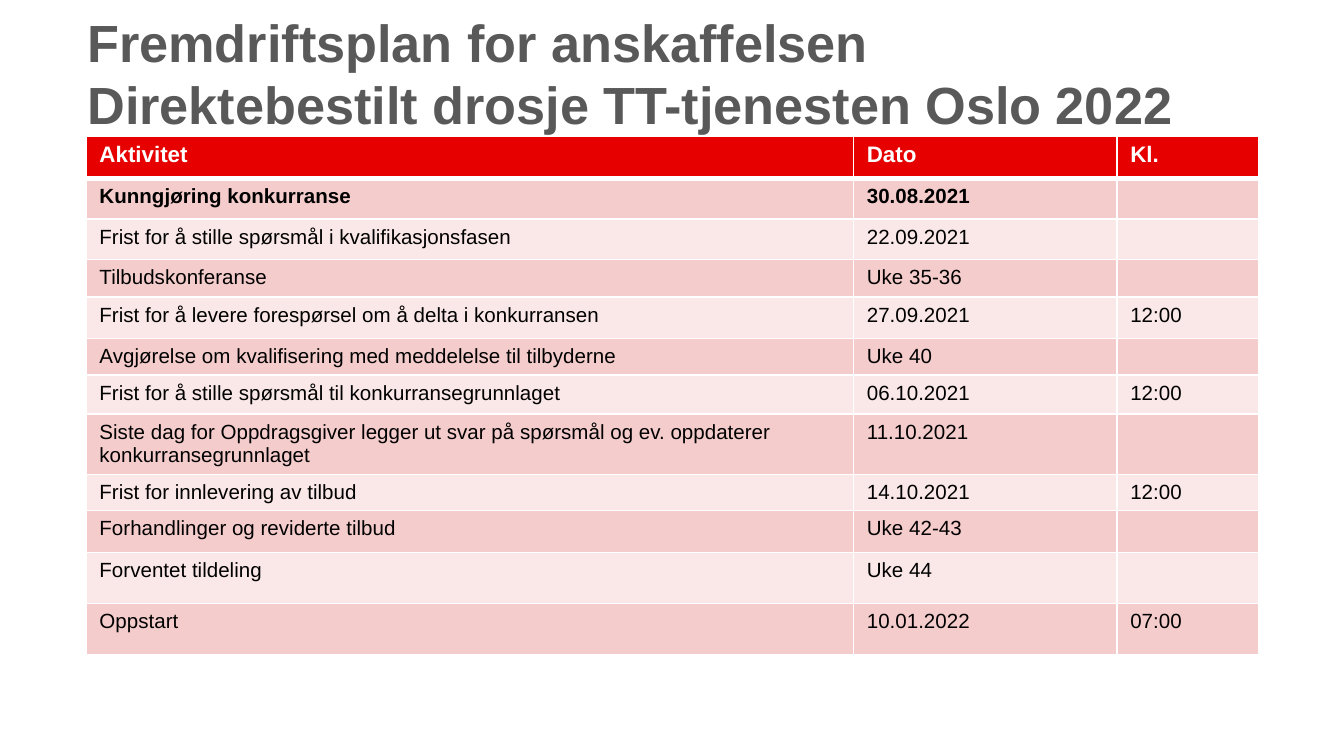
from lxml.etree import SubElement
from pptx import Presentation
from pptx.dml.color import RGBColor
from pptx.enum.text import MSO_ANCHOR, MSO_AUTO_SIZE, PP_ALIGN
from pptx.oxml.ns import qn
from pptx.util import Inches, Pt

FONT = "Arial"
WHITE = RGBColor(0xFF, 0xFF, 0xFF)
BLACK = RGBColor(0x00, 0x00, 0x00)
GREY = RGBColor(0x59, 0x59, 0x59)
RED = RGBColor(0xE6, 0x00, 0x00)
BANDS = (RGBColor(0xF5, 0xCC, 0xCC), RGBColor(0xFA, 0xE7, 0xE7))

TITLE = "Fremdriftsplan for anskaffelsen \vDirektebestilt drosje TT-tjenesten Oslo 2022"
COLUMN_WIDTHS = (5.71, 1.96, 1.06)
# Row height, activity, date, time
SCHEDULE = (
    (0.32, "Aktivitet", "Dato", "Kl."),
    (0.30, "Kunngjøring konkurranse", "30.08.2021", ""),
    (0.30, "Frist for å stille spørsmål i kvalifikasjonsfasen", "22.09.2021", ""),
    (0.28, "Tilbudskonferanse", "Uke 35-36", ""),
    (0.31, "Frist for å levere forespørsel om å delta i konkurransen", "27.09.2021", "12:00"),
    (0.27, "Avgjørelse om kvalifisering med meddelelse til tilbyderne", "Uke 40", ""),
    (0.29, "Frist for å stille spørsmål til konkurransegrunnlaget", "06.10.2021", "12:00"),
    (0.45, "Siste dag for Oppdragsgiver legger ut svar på spørsmål og ev. oppdaterer "
           "konkurransegrunnlaget", "11.10.2021", ""),
    (0.27, "Frist for innlevering av tilbud", "14.10.2021", "12:00"),
    (0.31, "Forhandlinger og reviderte tilbud", "Uke 42-43", ""),
    (0.38, "Forventet tildeling", "Uke 44", ""),
    (0.38, "Oppstart", "10.01.2022", "07:00"),
)


def set_font(para, size, color, bold):
    font = para.font
    font.name, font.size, font.bold = FONT, Pt(size), bold
    font.color.rgb = color


def set_borders(cell, top, bottom):
    """Draw white borders; top and bottom are widths in points."""
    properties = cell._tc.get_or_add_tcPr()
    widths = {"a:lnL": 1, "a:lnR": 1, "a:lnT": top, "a:lnB": bottom}
    for tag, width in widths.items():
        line = SubElement(properties, qn(tag), w=str(Pt(width)))
        fill = SubElement(line, qn("a:solidFill"))
        SubElement(fill, qn("a:srgbClr"), val=str(WHITE))


def add_title(page, left, top, width, height):
    title = page.shapes.title
    title.left, title.top, title.width, title.height = left, top, width, height
    frame = title.text_frame
    frame.text = TITLE
    frame.word_wrap = True
    frame.auto_size = MSO_AUTO_SIZE.NONE
    frame.vertical_anchor = MSO_ANCHOR.MIDDLE
    frame.margin_left = frame.margin_right = frame.margin_top = frame.margin_bottom = 0
    para = frame.paragraphs[0]
    para.alignment = PP_ALIGN.LEFT
    set_font(para, 28, GREY, True)


def fill_cell(cell, text, row):
    header = row == 0
    cell.text = text
    para = cell.text_frame.paragraphs[0]
    size = 12 if header else 11
    set_font(para, size, WHITE if header else BLACK, row < 2)
    if not text:  # keeps an empty cell from stretching its row
        SubElement(para._p, qn("a:endParaRPr"), sz=str(size * 100))
    set_borders(cell, top=3 if row == 1 else 1, bottom=3 if header else 1)
    cell.fill.solid()
    cell.fill.fore_color.rgb = RED if header else BANDS[(row - 1) % 2]


def add_schedule(page, left, top, width, height):
    frame = page.shapes.add_table(len(SCHEDULE), len(COLUMN_WIDTHS), left, top, width, height)
    table = frame.table
    for column, column_width in zip(table.columns, COLUMN_WIDTHS):
        column.width = Inches(column_width)
    for row, (row_height, *texts) in enumerate(SCHEDULE):
        table.rows[row].height = Inches(row_height)
        for column, text in enumerate(texts):
            fill_cell(table.cell(row, column), text, row)


def main():
    deck = Presentation()
    deck.slide_width = Inches(10)
    deck.slide_height = deck.slide_width * 9 // 16
    page = deck.slides.add_slide(deck.slide_layouts[5])
    add_title(page, Inches(0.65), Inches(0.07), Inches(8.73), Inches(0.94))
    add_schedule(page, Inches(0.64), Inches(1.01), Inches(sum(COLUMN_WIDTHS)),
                 Inches(sum(height for height, *_ in SCHEDULE)))
    deck.save("out.pptx")


if __name__ == "__main__":
    main()
